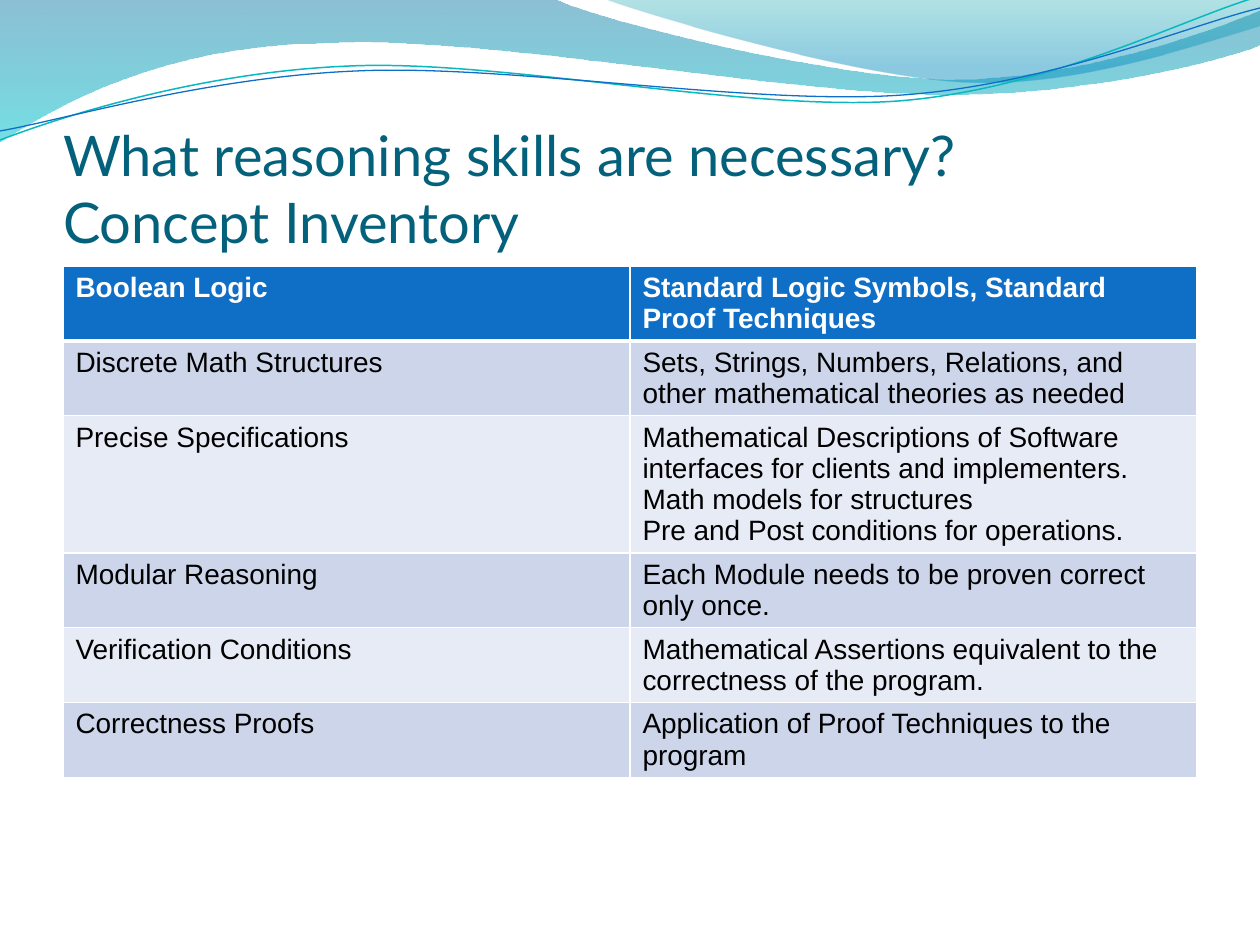
"""Build the slide on reasoning skills: wave header, title and concept inventory table."""
import pptx
import pptx.dml.color
import pptx.enum.text
import pptx.oxml
import pptx.oxml.ns
import pptx.util

COLORS = {
    "title": "04617B", "header": "0F6FC6", "band_dark": "CCD5EA", "band_light": "E7EBF5",
    "white": "FFFFFF", "black": "000000", "teal": "0AB8BF", "blue": "0F6FC6",
    "deep": "0074A1", "aqua": "00C6CF", "green": "00A1A9", "sky": "008BBF",
}
TITLE_LINES = ["What reasoning skills are necessary?", "Concept Inventory"]
INVENTORY = [
    ("Boolean Logic", ["Standard Logic Symbols, Standard Proof Techniques"]),
    ("Discrete Math Structures",
     ["Sets, Strings, Numbers, Relations, and other mathematical theories as needed"]),
    ("Precise Specifications",
     ["Mathematical Descriptions of Software interfaces for clients and implementers.",
      "Math models for structures",
      "Pre and Post conditions for operations."]),
    ("Modular Reasoning", ["Each Module needs to be proven correct only once."]),
    ("Verification Conditions",
     ["Mathematical Assertions equivalent to the correctness of the program."]),
    ("Correctness Proofs", ["Application of Proof Techniques to the program"]),
]
BANDS = [
    {"outline": [(0, 0), (554, -1), (600, 21, 837, 79, 955, 79), (1075, 79, 1207, 33, 1260, 11),
                 (1261, 45), (1239, 55, 1096, 96, 940, 94), (784, 94, 481, 35, 324, 43),
                 (163, 45, 58, 105, -1, 142)],
     "stops": [(0, "deep", 45), (1, "aqua", 55)]},
    {"outline": [(604, -1), (642, 14, 859, 78, 969, 82), (1079, 87, 1211, 40, 1260, 26),
                 (1260, 0)],
     "stops": [(0, "green", 30), (0.8, "sky", 45)]},
]
WAVES = [
    {"outline": [(0, 140), (60, 117, 199, 72, 349, 66), (498, 59, 747, 112, 898, 101),
                 (1050, 89, 1182, 19, 1257, -3)],
     "color": "teal", "width": 0.85},
    {"outline": [(0, 131), (59, 121, 207, 77, 357, 71), (508, 64, 752, 106, 903, 95),
                 (1053, 84, 1186, 26, 1260, 8)],
     "color": "blue", "width": 0.75},
]
PX = 914400 // 126
LEFT, WIDTH = 63, 1134
TITLE_TOP, TITLE_HEIGHT = 97, 158
TABLE_TOP, TABLE_HEIGHT, ROW_HEIGHT = 266, 546, 52


def rgb(name):
    return pptx.dml.color.RGBColor.from_string(COLORS[name])


def add_outline(slide, outline, close):
    builder = slide.shapes.build_freeform(*outline[0], scale=PX)
    builder.add_line_segments([segment[-2:] for segment in outline[1:]], close=close)
    shape = builder.convert_to_shape()
    shape.shadow.inherit = False
    anchors_x, anchors_y = zip(*(segment[-2:] for segment in outline))
    left, top = min(anchors_x), min(anchors_y)
    lines = list(shape._element.spPr.iter(pptx.oxml.ns.qn("a:lnTo")))
    for line, segment in zip(lines, outline[1:]):
        if len(segment) == 6:
            points = "".join(f'<a:pt x="{x - left}" y="{y - top}"/>'
                             for x, y in zip(segment[::2], segment[1::2]))
            curve = pptx.oxml.parse_xml(
                f'<a:cubicBezTo {pptx.oxml.ns.nsdecls("a")}>{points}</a:cubicBezTo>')
            line.getparent().replace(line, curve)
    return shape


def add_band(slide, band):
    shape = add_outline(slide, band["outline"], True)
    shape.line.fill.background()
    shape.fill.gradient()
    shape.fill.gradient_angle = 270
    for stop, (position, color, _) in zip(shape.fill.gradient_stops, band["stops"]):
        stop.position = position
        stop.color.rgb = rgb(color)
    colors = shape._element.spPr.iter(pptx.oxml.ns.qn("a:srgbClr"))
    for element, (_, _, opacity) in zip(colors, band["stops"]):
        alpha = pptx.oxml.parse_xml(
            f'<a:alpha {pptx.oxml.ns.nsdecls("a")} val="{opacity * 1000}"/>')
        element.append(alpha)


def add_wave(slide, wave):
    shape = add_outline(slide, wave["outline"], False)
    shape.fill.background()
    shape.line.color.rgb = rgb(wave["color"])
    shape.line.width = pptx.util.Pt(wave["width"])


def add_run(paragraph, text, font, size, color, bold=False):
    run = paragraph.add_run()
    run.text = text
    run.font.name = font
    run.font.size = pptx.util.Pt(size)
    run.font.bold = bold
    run.font.color.rgb = rgb(color)


def fill_title(title):
    title.left, title.top = LEFT * PX, TITLE_TOP * PX
    title.width, title.height = WIDTH * PX, TITLE_HEIGHT * PX
    frame = title.text_frame
    frame.word_wrap = True
    frame.auto_size = pptx.enum.text.MSO_AUTO_SIZE.NONE
    frame.vertical_anchor = pptx.enum.text.MSO_ANCHOR.BOTTOM
    frame.margin_left = frame.margin_right = frame.margin_bottom = 0
    heading = frame.paragraphs[0]
    heading.alignment = pptx.enum.text.PP_ALIGN.LEFT
    for index, line in enumerate(TITLE_LINES):
        if index:
            heading.add_line_break()
        add_run(heading, line, "Lato", 32, "title")


def border_cell(cell, widths):
    properties = cell._tc.get_or_add_tcPr()
    for index, (side, width) in enumerate(widths.items()):
        border = pptx.oxml.parse_xml(
            f'<a:ln{side} {pptx.oxml.ns.nsdecls("a")} w="{pptx.util.Pt(width)}">'
            f'<a:solidFill><a:srgbClr val="{COLORS["white"]}"/></a:solidFill></a:ln{side}>')
        properties.insert(index, border)


def add_inventory(slide):
    inventory = slide.shapes.add_table(
        len(INVENTORY), 2, LEFT * PX, TABLE_TOP * PX,
        WIDTH * PX, ROW_HEIGHT * len(INVENTORY) * PX)
    inventory.height = TABLE_HEIGHT * PX
    for row, (topic, details) in enumerate(INVENTORY):
        is_header = row == 0
        band = "header" if is_header else "band_dark" if row % 2 else "band_light"
        widths = {"L": 1, "R": 1, "T": 3 if row == 1 else 1, "B": 3 if is_header else 1}
        for column, lines in enumerate([[topic], details]):
            cell = inventory.table.cell(row, column)
            cell.fill.solid()
            cell.fill.fore_color.rgb = rgb(band)
            border_cell(cell, widths)
            frame = cell.text_frame
            for index, line in enumerate(lines):
                paragraph = frame.add_paragraph() if index else frame.paragraphs[0]
                add_run(paragraph, line, "Arial", 16,
                        "white" if is_header else "black", is_header)


def main():
    deck = pptx.Presentation()
    deck.slide_width, deck.slide_height = 1260 * PX, 945 * PX
    slide = deck.slides.add_slide(deck.slide_layouts[5])
    for band in BANDS:
        add_band(slide, band)
    for wave in WAVES:
        add_wave(slide, wave)
    fill_title(slide.shapes.title)
    add_inventory(slide)
    deck.save("out.pptx")


if __name__ == "__main__":
    main()
